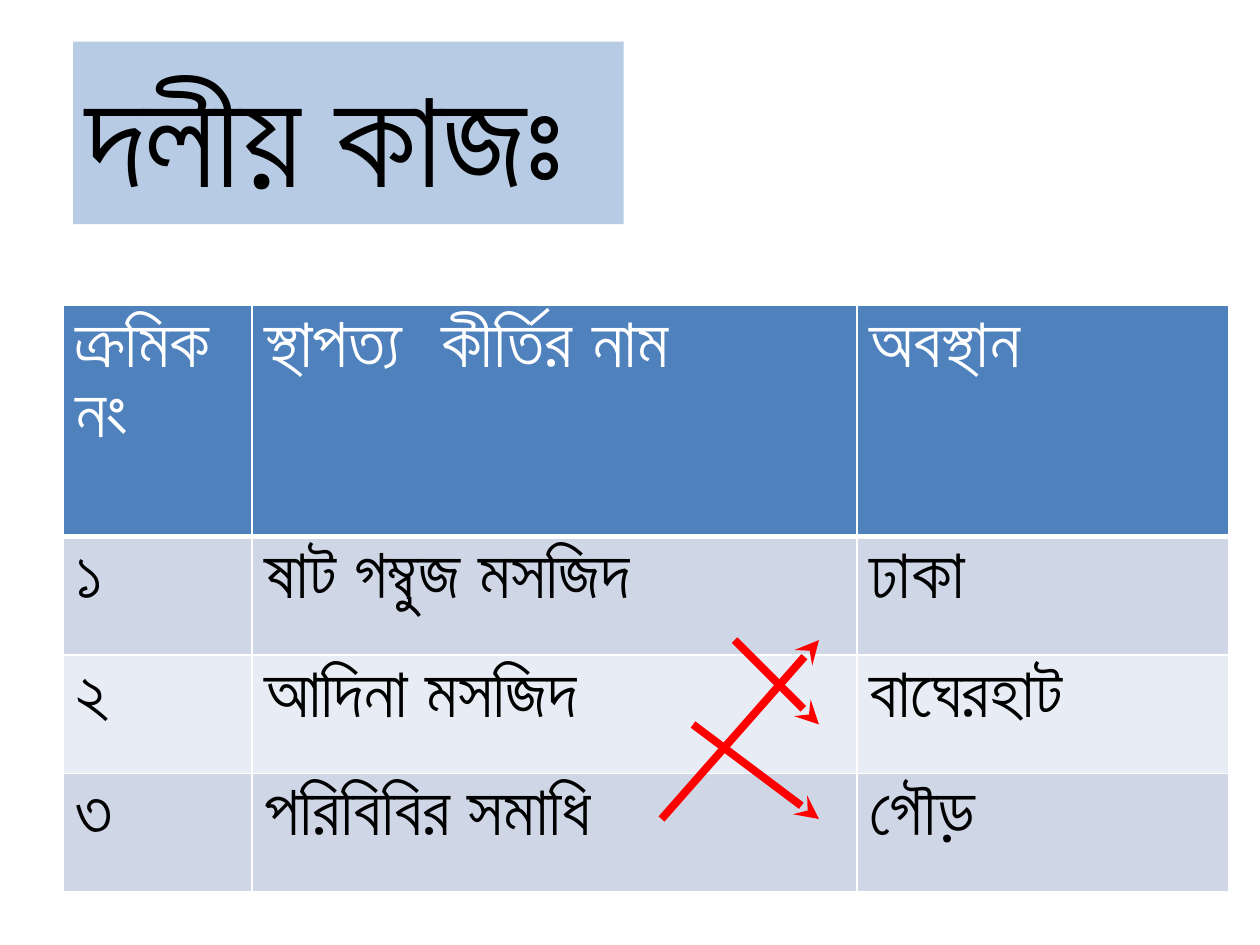
from lxml import etree
from pptx import Presentation
from pptx.dml.color import RGBColor
from pptx.enum.shapes import MSO_CONNECTOR
from pptx.enum.text import MSO_ANCHOR, MSO_AUTO_SIZE, PP_ALIGN
from pptx.oxml.ns import qn
from pptx.util import Inches, Pt

STRAIGHT = MSO_CONNECTOR.STRAIGHT
TOP = MSO_ANCHOR.TOP
LEFT = PP_ALIGN.LEFT
FIXED_SIZE = MSO_AUTO_SIZE.NONE
TITLE_ONLY = 5

FONT = "Arial"
BLACK, WHITE, RED = "000000", "FFFFFF", "FF0000"
HEADER_FILL = "4F81BD"
BAND_FILLS = ("CFD7E7", "E8ECF4")

TABLE_LEFT, TABLE_TOP = 0.5, 2.42
COLUMN_WIDTHS = (1.5, 4.8, 2.95)
HEADER_HEIGHT, ROW_HEIGHT = 1.84, 0.94
MONUMENTS = (
    ("ক্রমিক নং", "স্থাপত্য  কীর্তির নাম", "অবস্থান"),
    ("১", "ষাট গম্বুজ মসজিদ", "ঢাকা"),
    ("২", "আদিনা মসজিদ", "বাঘেরহাট"),
    ("৩", "পরিবিবির সমাধি", "গৌড়"),
)

ANSWER_X = 6.5
ANSWER_YS = (5.08, 5.75, 6.5)
MATCHES = ((5.83, 0, 1), (5.5, 1, 2), (5.25, 2, 0))


def color(value):
    return RGBColor.from_string(value)


def add_text(frame, text, size, text_color, bold=False):
    paragraph = frame.paragraphs[0]
    paragraph.alignment = LEFT
    run = paragraph.add_run()
    run.text = text
    run.font.name = FONT
    run.font.size = Pt(size)
    run.font.bold = bold
    run.font.color.rgb = color(text_color)


def add_heading(slide, text):
    heading = slide.shapes.title
    heading.left, heading.top = Inches(0.58), Inches(0.33)
    heading.width, heading.height = Inches(4.37), Inches(1.45)
    heading.fill.solid()
    heading.fill.fore_color.rgb = color("B7CCE4")
    frame = heading.text_frame
    frame.auto_size = FIXED_SIZE
    frame.word_wrap = True
    frame.vertical_anchor = TOP
    add_text(frame, text, 80, BLACK)


def set_borders(cell, bottom_width):
    properties = cell._tc.get_or_add_tcPr()
    widths = {"a:lnL": 1, "a:lnR": 1, "a:lnT": 1, "a:lnB": bottom_width}
    for position, (side, width) in enumerate(widths.items()):
        border = etree.Element(qn(side), w=str(Pt(width)))
        fill = etree.SubElement(border, qn("a:solidFill"))
        etree.SubElement(fill, qn("a:srgbClr"), val=WHITE)
        properties.insert(position, border)


def add_monument_table(slide):
    heights = [HEADER_HEIGHT] + [ROW_HEIGHT] * (len(MONUMENTS) - 1)
    table = slide.shapes.add_table(
        len(MONUMENTS), len(COLUMN_WIDTHS), Inches(TABLE_LEFT), Inches(TABLE_TOP),
        Inches(sum(COLUMN_WIDTHS)), Inches(sum(heights))).table
    for column, width in zip(table.columns, COLUMN_WIDTHS):
        column.width = Inches(width)
    for row_number, (row, height) in enumerate(zip(table.rows, heights)):
        row.height = Inches(height)
        is_header = row_number == 0
        row_fill = HEADER_FILL if is_header else BAND_FILLS[(row_number - 1) % 2]
        for cell, text in zip(row.cells, MONUMENTS[row_number]):
            cell.fill.solid()
            cell.fill.fore_color.rgb = color(row_fill)
            set_borders(cell, 3 if is_header else 1)
            add_text(cell.text_frame, text, 40, WHITE if is_header else BLACK, is_header)


def add_match_arrow(slide, start_x, start_row, answer_row):
    arrow = slide.shapes.add_connector(
        STRAIGHT, Inches(start_x), Inches(ANSWER_YS[start_row]),
        Inches(ANSWER_X), Inches(ANSWER_YS[answer_row]))
    arrow.line.color.rgb = color(RED)
    arrow.line.width = Pt(4.5)
    etree.SubElement(arrow.line._get_or_add_ln(), qn("a:tailEnd"), type="stealth")
    etree.SubElement(arrow._element.spPr, qn("a:effectLst"))


def main():
    presentation = Presentation()
    presentation.slide_width, presentation.slide_height = Inches(10), Inches(7.5)
    slide = presentation.slides.add_slide(presentation.slide_layouts[TITLE_ONLY])
    add_heading(slide, "দলীয় কাজঃ")
    add_monument_table(slide)
    for match in MATCHES:
        add_match_arrow(slide, *match)
    presentation.save("out.pptx")


if __name__ == "__main__":
    main()
